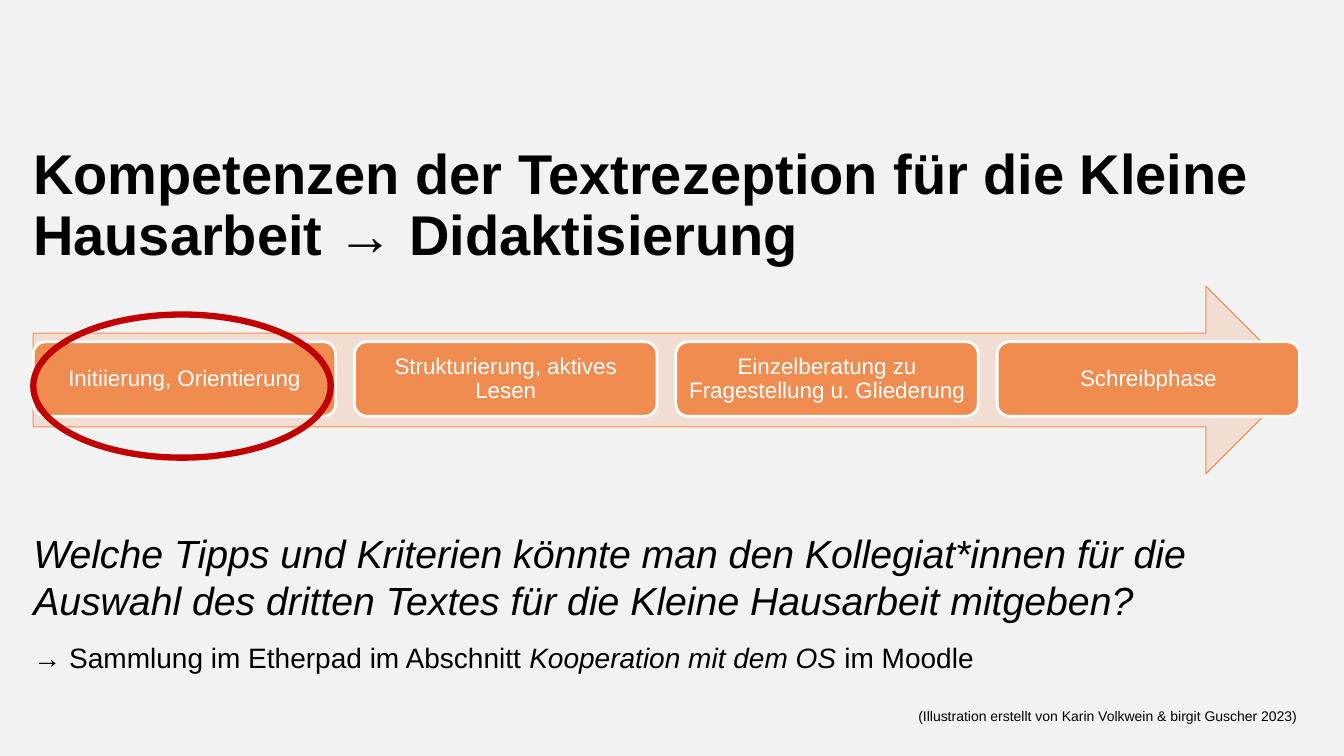
from dataclasses import dataclass

from lxml.etree import SubElement
from pptx import Presentation
from pptx.dml.color import RGBColor
from pptx.enum.shapes import MSO_SHAPE as Kind
from pptx.enum.text import MSO_ANCHOR as Anchor, MSO_AUTO_SIZE as Fit, PP_ALIGN as Align
from pptx.oxml.ns import qn
from pptx.shapes.autoshape import Shape
from pptx.slide import Slide
from pptx.util import Inches, Pt

BLACK = RGBColor(0, 0, 0)
WHITE = RGBColor(255, 255, 255)
GREY = RGBColor(0xF2, 0xF2, 0xF2)
ORANGE = RGBColor(0xF0, 0x8C, 0x50)
RED = RGBColor(0xC0, 0, 0)

LEFT, WIDTH = 0.33, 12.56
STEP_WIDTH = 3.0


@dataclass
class Box:
    left: float
    top: float
    width: float
    height: float


@dataclass
class Step:
    label: str
    box: Box


@dataclass
class Run:
    text: str
    size: float
    color: RGBColor = BLACK
    bold: bool = False
    italic: bool = False


LABELS = [
    "Initiierung, Orientierung",
    "Strukturierung, aktives Lesen",
    "Einzelberatung zu Fragestellung u. Gliederung",
    "Schreibphase",
]
PITCH = (WIDTH - STEP_WIDTH) / (len(LABELS) - 1)
STEPS = [
    Step(label, Box(LEFT + i * PITCH, 3.39, STEP_WIDTH, 0.74))
    for i, label in enumerate(LABELS)
]
BODY = [
    [Run("Welche Tipps und Kriterien könnte man den Kollegiat*innen für die "
         "Auswahl des dritten Textes für die Kleine Hausarbeit mitgeben?",
         28, italic=True)],
    [Run("→ Sammlung im Etherpad im Abschnitt ", 20),
     Run("Kooperation mit dem OS ", 20, italic=True),
     Run("im Moodle", 20)],
]


def place(shape: Shape, box: Box) -> None:
    shape.left, shape.top = Inches(box.left), Inches(box.top)
    shape.width, shape.height = Inches(box.width), Inches(box.height)


def set_frame(shape: Shape, inset: float, anchor: Anchor) -> None:
    frame = shape.text_frame
    frame.word_wrap = True
    frame.auto_size = Fit.NONE
    frame.vertical_anchor = anchor
    frame.margin_left = frame.margin_right = Inches(inset)
    frame.margin_top = frame.margin_bottom = Inches(inset)


def write(shape: Shape, lines: list[list[Run]], spacing: list[float],
          align: Align = Align.LEFT) -> None:
    frame = shape.text_frame
    for i, runs in enumerate(lines):
        para = frame.add_paragraph() if i else frame.paragraphs[0]
        props = para._p.get_or_add_pPr()
        props.set("marL", "0")
        props.set("indent", "0")
        SubElement(props, qn("a:buNone"))
        para.alignment = align
        para.line_spacing = spacing[i]
        para.space_before = Pt(0)
        for item in runs:
            run = para.add_run()
            run.text = item.text
            font = run.font
            font.name, font.size = "Arial", Pt(item.size)
            font.bold, font.italic = item.bold, item.italic
            font.color.rgb = item.color


def draw(slide: Slide, kind: Kind, box: Box, fill: RGBColor | None,
         line: RGBColor, weight: float) -> Shape:
    shape = slide.shapes.add_shape(
        kind, Inches(box.left), Inches(box.top),
        Inches(box.width), Inches(box.height))
    shape.shadow.inherit = False
    if fill is None:
        shape.fill.background()
    else:
        shape.fill.solid()
        shape.fill.fore_color.rgb = fill
    shape.line.color.rgb = line
    shape.line.width = Pt(weight)
    return shape


def add_step(slide: Slide, step: Step) -> None:
    shape = draw(slide, Kind.ROUNDED_RECTANGLE, step.box, ORANGE, WHITE, 2)
    set_frame(shape, 0.07, Anchor.MIDDLE)
    write(shape, [[Run(step.label, 16, WHITE)]], [0.9], Align.CENTER)


def main() -> None:
    deck = Presentation()
    deck.slide_width, deck.slide_height = Inches(13.33), Inches(7.5)
    slide = deck.slides.add_slide(deck.slide_layouts[1])
    slide.background.fill.solid()
    slide.background.fill.fore_color.rgb = GREY

    title, body = slide.placeholders
    place(title, Box(LEFT, 1.45, 12.68, 1.25))
    set_frame(title, 0, Anchor.TOP)
    head = "Kompetenzen der Textrezeption für die Kleine Hausarbeit → Didaktisierung"
    write(title, [[Run(head, 40, bold=True)]], [0.9])

    place(body, Box(LEFT, 5.25, WIDTH, 1.57))
    set_frame(body, 0, Anchor.TOP)
    write(body, BODY, [1.0, 1.5])

    arrow = draw(slide, Kind.RIGHT_ARROW, Box(LEFT, 2.84, WIDTH, 1.86),
                 ORANGE, ORANGE, 0.75)
    tint = arrow._element.spPr.find(qn("a:solidFill")).find(qn("a:srgbClr"))
    SubElement(tint, qn("a:alpha"), val="20000")

    for step in STEPS:
        add_step(slide, step)
    draw(slide, Kind.OVAL, Box(LEFT, 3.12, 2.95, 1.42), None, RED, 4.5)

    credit = slide.shapes.add_textbox(
        Inches(9.01), Inches(6.97), Inches(4), Inches(0.27))
    note = "(Illustration erstellt von Karin Volkwein & birgit Guscher 2023)"
    write(credit, [[Run(note, 10)]], [1.0])
    credit.text_frame.word_wrap = False
    credit.text_frame.auto_size = Fit.SHAPE_TO_FIT_TEXT

    deck.save("out.pptx")


if __name__ == "__main__":
    main()
